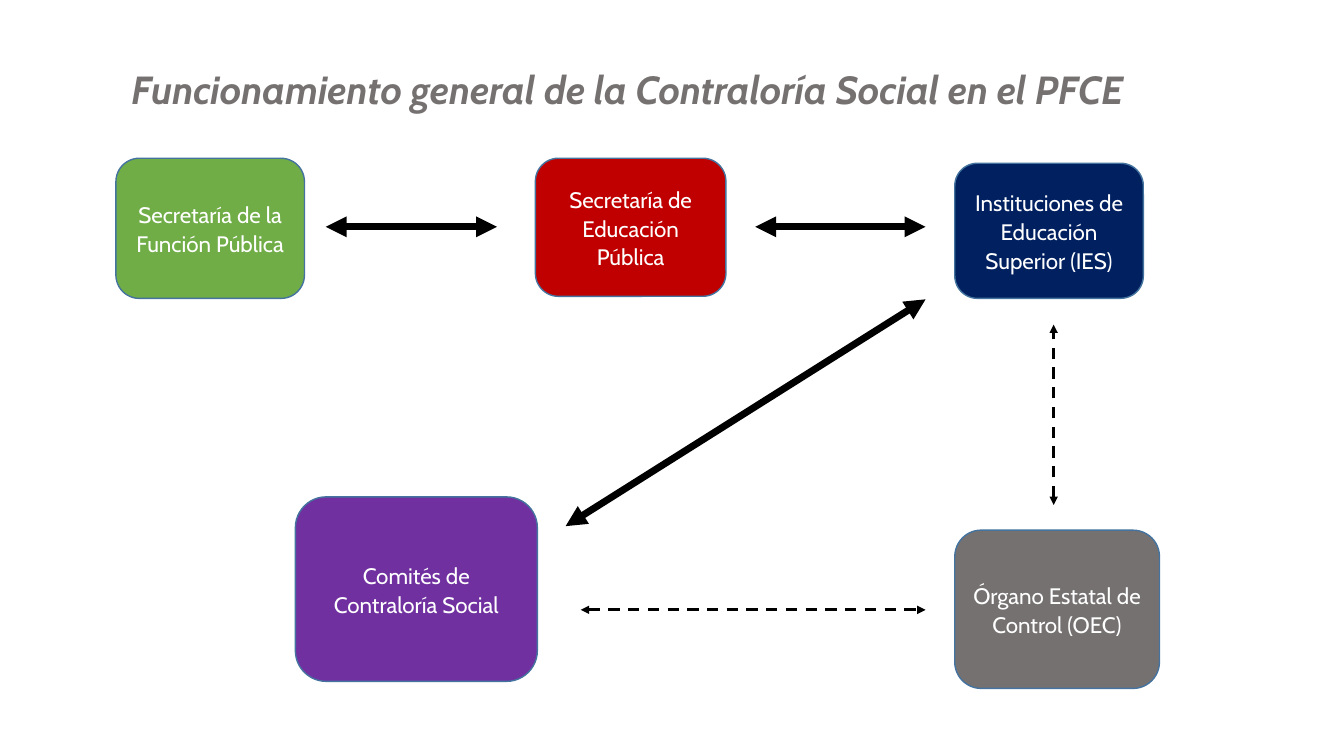
from lxml import etree
from pptx import Presentation
from pptx.dml.color import RGBColor
from pptx.enum.dml import MSO_LINE
from pptx.enum.shapes import MSO_CONNECTOR, MSO_SHAPE
from pptx.enum.text import MSO_ANCHOR as Anchor, PP_ALIGN as Align
from pptx.oxml.ns import qn
from pptx.util import Inches, Pt

FONT = "Cabin"
WHITE = RGBColor(0xFF, 0xFF, 0xFF)
BLACK = RGBColor(0x00, 0x00, 0x00)
GRAY = RGBColor(0x76, 0x71, 0x71)
NAVY = RGBColor(0x00, 0x20, 0x60)
GREEN = RGBColor(0x70, 0xAD, 0x47)
RED = RGBColor(0xC0, 0x00, 0x00)
PURPLE = RGBColor(0x70, 0x30, 0xA0)
OUTLINE = RGBColor(0x43, 0x73, 0x9E)


def write(frame, text, size=16, color=WHITE, bold=False, italic=False,
          anchor=Anchor.MIDDLE, spacing=1.07, after=8):
    frame.word_wrap = True
    frame.vertical_anchor = anchor
    paragraph = frame.paragraphs[0]
    paragraph.alignment = Align.CENTER
    paragraph.line_spacing = spacing
    paragraph.space_after = Pt(after)
    run = paragraph.add_run()
    run.text = text
    font = run.font
    font.name, font.size, font.bold, font.italic = FONT, Pt(size), bold, italic
    font.color.rgb = color


class Diagram:
    """Holds the line style and the slide being drawn."""
    thick, thin = Pt(5), Pt(2)

    def __init__(self, slide):
        self.shapes = slide.shapes

    def title(self, text, *box):
        heading = self.shapes.add_textbox(*map(Inches, box))
        write(heading.text_frame, text, size=28, color=GRAY, bold=True,
              italic=True, anchor=Anchor.BOTTOM, spacing=0.9, after=0)

    def body(self, text, fill, *box):
        body = self.shapes.add_shape(MSO_SHAPE.ROUNDED_RECTANGLE, *map(Inches, box))
        body.shadow.inherit = False
        body.fill.solid()
        body.fill.fore_color.rgb = fill
        body.line.color.rgb = OUTLINE
        body.line.width = Pt(1)
        write(body.text_frame, text)

    def arrow(self, *ends, dashed=False):
        arrow = self.shapes.add_connector(MSO_CONNECTOR.STRAIGHT, *map(Inches, ends))
        arrow.line.color.rgb = BLACK
        arrow.line.width = self.thin if dashed else self.thick
        if dashed:
            arrow.line.dash_style = MSO_LINE.DASH
        properties = arrow._element.spPr
        outline = properties.find(qn("a:ln"))
        for end in ("a:headEnd", "a:tailEnd"):
            etree.SubElement(outline, qn(end), type="triangle")
        etree.SubElement(properties, qn("a:effectLst"))


def main():
    prs = Presentation()
    prs.slide_width, prs.slide_height = Inches(13.33), Inches(7.5)
    diagram = Diagram(prs.slides.add_slide(prs.slide_layouts[6]))

    # Title
    diagram.title("Funcionamiento general de la Contraloría Social en el PFCE",
                  0.43, 0.4, 11.58, 0.77)

    # Participating bodies
    for name, fill, *box in (
        ("Secretaría de la Función Pública", GREEN, 1.15, 1.57, 1.87, 1.39),
        ("Secretaría de Educación Pública", RED, 5.31, 1.57, 1.89, 1.37),
        ("Instituciones de Educación Superior (IES)", NAVY, 9.47, 1.62, 1.87, 1.34),
        ("Comités de Contraloría Social", PURPLE, 2.93, 4.93, 2.4, 1.83),
        ("Órgano Estatal de Control (OEC)", GRAY, 9.47, 5.26, 2.03, 1.57),
    ):
        diagram.body(name, fill, *box)

    # Direct relations
    top_row, right = 2.25, 9.18
    diagram.arrow(3.23, top_row, 4.93, top_row)
    diagram.arrow(7.49, top_row, right, top_row)
    diagram.arrow(5.61, 5.22, right, 2.97)

    # Relations with the state control body
    diagram.arrow(10.45, 5.01, 10.45, 3.22, dashed=True)
    diagram.arrow(5.76, 6.05, right, 6.05, dashed=True)

    prs.save("out.pptx")


if __name__ == "__main__":
    main()
